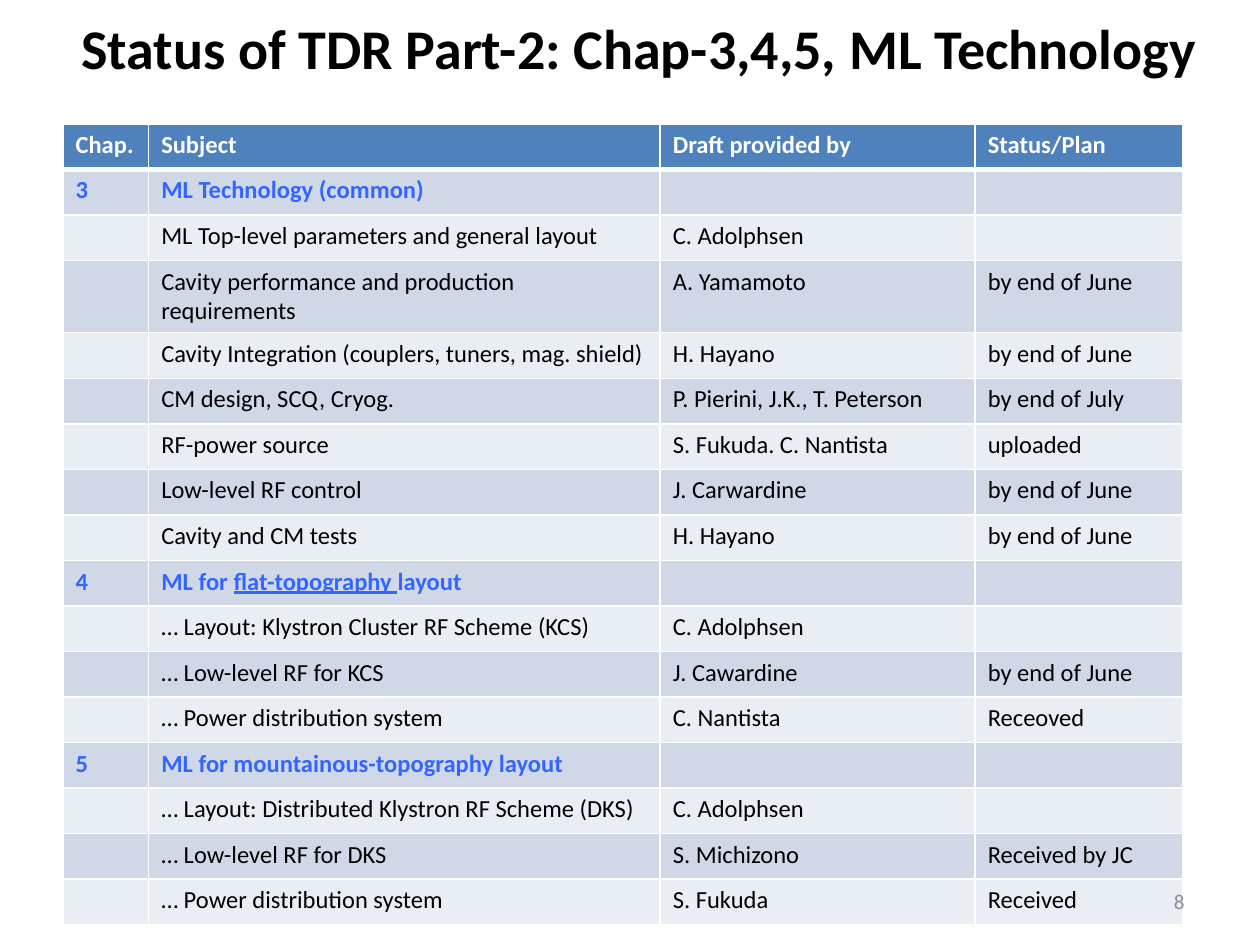
from lxml import etree
from pptx import Presentation
from pptx import util as u
from pptx.dml.color import RGBColor
from pptx.enum import text
from pptx.oxml import ns

BLACK = RGBColor(0x00, 0x00, 0x00)
WHITE = RGBColor(0xFF, 0xFF, 0xFF)
GREY = RGBColor(0x8C, 0x8C, 0x8C)
CHAPTER_BLUE = RGBColor(0x33, 0x66, 0xFF)
HEADER_BLUE = RGBColor(0x4F, 0x81, 0xBD)
BANDS = RGBColor(0xD0, 0xD8, 0xE8), RGBColor(0xE9, 0xED, 0xF4)

WIDTH, HEIGHT = u.Inches(10), u.Inches(7.5)
TITLE = "Status of TDR Part-2: Chap-3,4,5, ML Technology"
HEADER = "Chap.", "Subject", "Draft provided by", "Status/Plan"
CHAPTERS = [
    ("3", ["ML Technology (common)"], [
        ("ML Top-level parameters and general layout", "C. Adolphsen", ""),
        ("Cavity performance and production requirements", "A. Yamamoto", "by end of June"),
        ("Cavity Integration (couplers, tuners, mag. shield)", "H. Hayano", "by end of June"),
        ("CM design, SCQ, Cryog.", "P. Pierini, J.K., T. Peterson", "by end of July"),
        ("RF-power source", "S. Fukuda. C. Nantista", "uploaded"),
        ("Low-level RF control", "J. Carwardine", "by end of June"),
        ("Cavity and CM tests", "H. Hayano", "by end of June"),
    ]),
    ("4", ["ML for ", "flat-topography ", "layout"], [
        ("… Layout: Klystron Cluster RF Scheme (KCS)", "C. Adolphsen", ""),
        ("… Low-level RF for KCS", "J. Cawardine", "by end of June"),
        ("… Power distribution system", "C. Nantista", "Receoved"),
    ]),
    ("5", ["ML for mountainous-topography layout"], [
        ("… Layout: Distributed Klystron RF Scheme (DKS)", "C. Adolphsen", ""),
        ("… Low-level RF for DKS", "S. Michizono", "Received by JC"),
        ("… Power distribution system", "S. Fukuda", "Received"),
    ]),
]
COLUMN_SHARES = 0.068, 0.406, 0.25, 0.165
ROW_SHARE = 0.0482
TALL_ROW, TALL_ROW_SHARE = 3, 0.076


def write(paragraph, content, size=14, color=BLACK, bold=False, underline=False,
          align=None, font="Calibri"):
    if align is not None:
        paragraph.alignment = align
    if not content:
        etree.SubElement(paragraph._p, ns.qn("a:endParaRPr"), sz=str(size * 100))
        return
    run = paragraph.add_run()
    run.text = content
    run.font.name, run.font.size, run.font.bold = font, u.Pt(size), bold
    run.font.underline = underline
    run.font.color.rgb = color


def add_borders(cell, widths, color=WHITE):
    properties = cell._tc.get_or_add_tcPr()
    for side in "LRTB":
        line = etree.SubElement(properties, ns.qn(f"a:ln{side}"), w=str(u.Pt(widths.get(side, 1))))
        fill = etree.SubElement(line, ns.qn("a:solidFill"))
        etree.SubElement(fill, ns.qn("a:srgbClr"), val=str(color))


class StatusSlide:
    def __init__(self, presentation):
        self.slide = presentation.slides.add_slide(presentation.slide_layouts[5])

    def area(self, left, top, width, height):
        return (round(left * WIDTH), round(top * HEIGHT),
                round(width * WIDTH), round(height * HEIGHT))

    def title(self, content, *shares):
        shape = self.slide.shapes.title
        shape.left, shape.top, shape.width, shape.height = self.area(*shares)
        frame = shape.text_frame
        frame.auto_size = text.MSO_AUTO_SIZE.NONE
        frame.vertical_anchor = text.MSO_ANCHOR.MIDDLE
        write(frame.paragraphs[0], content, size=32, bold=True, align=text.PP_ALIGN.CENTER)

    def label(self, content, *shares, **style):
        frame = self.slide.shapes.add_textbox(*self.area(*shares)).text_frame
        frame.word_wrap = True
        frame.vertical_anchor = text.MSO_ANCHOR.MIDDLE
        write(frame.paragraphs[0], content, **style)

    def table(self, rows, left, top):
        shares = [TALL_ROW_SHARE if index == TALL_ROW else ROW_SHARE for index in range(len(rows))]
        area = self.area(left, top, sum(COLUMN_SHARES), sum(shares))
        table = self.slide.shapes.add_table(len(rows), len(COLUMN_SHARES), *area).table
        for column, share in zip(table.columns, COLUMN_SHARES):
            column.width = round(share * WIDTH)
        for index, (row, share, (cells, style)) in enumerate(zip(table.rows, shares, rows)):
            row.height = round(share * HEIGHT)
            fill = BANDS[(index - 1) % 2] if index else HEADER_BLUE
            borders = {0: {"B": 3}, 1: {"T": 3}}.get(index, {})
            for cell, parts in zip(row.cells, cells):
                add_borders(cell, borders)
                cell.fill.solid()
                cell.fill.fore_color.rgb = fill
                paragraph = cell.text_frame.paragraphs[0]
                for position, part in enumerate(parts):
                    write(paragraph, part, underline=position == 1, **style)


def status_rows():
    rows = [([[name] for name in HEADER], {"color": WHITE, "bold": True})]
    for number, subject, entries in CHAPTERS:
        rows.append(([[number], subject, [""], [""]], {"color": CHAPTER_BLUE, "bold": True}))
        rows += [([[""]] + [[value] for value in entry], {}) for entry in entries]
    return rows


def main():
    presentation = Presentation()
    presentation.slide_width, presentation.slide_height = WIDTH, HEIGHT
    page = StatusSlide(presentation)
    page.title(TITLE, 0.03, 0, 0.955, 0.1)
    page.table(status_rows(), 0.05, 0.131)
    page.label("8", 0.717, 0.927, 0.233, 0.053, size=12, color=GREY, align=text.PP_ALIGN.RIGHT)
    presentation.save("out.pptx")


if __name__ == "__main__":
    main()
